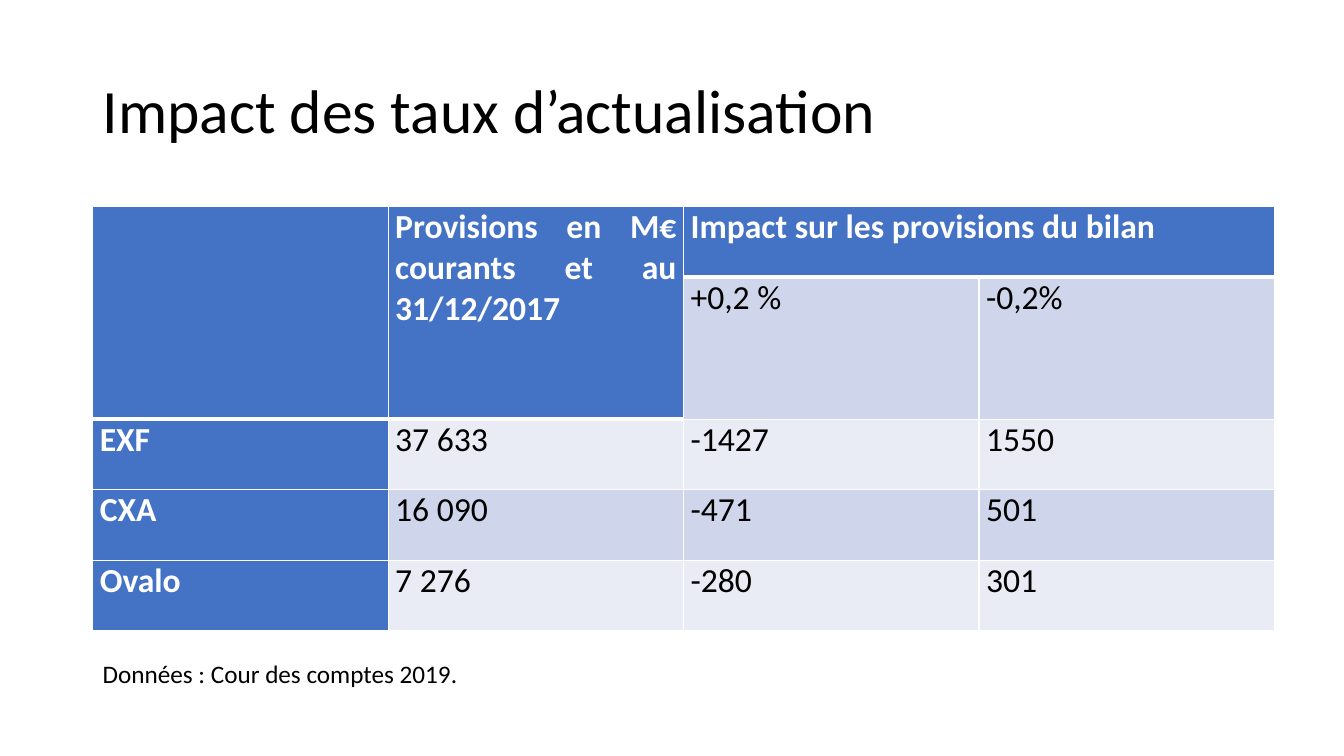
"""Build a slide with a table on the impact of discount rates."""
import pptx
import pptx.dml.color
import pptx.enum.text
import pptx.oxml
import pptx.oxml.ns
import pptx.util

Inches = pptx.util.Inches
Pt = pptx.util.Pt
RGBColor = pptx.dml.color.RGBColor
Align = pptx.enum.text.PP_ALIGN
Anchor = pptx.enum.text.MSO_ANCHOR

BLACK = RGBColor(0x00, 0x00, 0x00)
WHITE = RGBColor(0xFF, 0xFF, 0xFF)
BLUE = RGBColor(0x44, 0x72, 0xC4)
BAND_DARK = RGBColor(0xCF, 0xD5, 0xEA)
BAND_LIGHT = RGBColor(0xE9, 0xEB, 0xF5)

LEFT = Inches(0.92)
ROWS = [
    ["", "Provisions en M€ courants et au 31/12/2017", "Impact sur les provisions du bilan", ""],
    ["", "", "+0,2 %", "-0,2%"],
    ["EXF", "37 633", "-1427", "1550"],
    ["CXA", "16 090", "-471", "501"],
    ["Ovalo", "7 276", "-280", "301"],
]
ROW_HEIGHTS = [0.7, 1.41, 0.7, 0.7, 0.7]


def write(frame, text, size=24, color=BLACK, bold=False, align=Align.LEFT, spacing=1.0):
    para = frame.paragraphs[0]
    para.alignment = align
    para.line_spacing = spacing
    span = para.add_run()
    span.text = text
    span.font.name = "Calibri"
    span.font.size = Pt(size)
    span.font.bold = bold
    span.font.color.rgb = color


def add_border(cell, side, width):
    line = pptx.oxml.parse_xml(
        f'<a:{side} {pptx.oxml.ns.nsdecls("a")} w="{Pt(width)}">'
        f'<a:solidFill><a:srgbClr val="{WHITE}"/></a:solidFill></a:{side}>'
    )
    cell._tc.get_or_add_tcPr().append(line)


deck = pptx.Presentation()
deck.slide_width = Inches(13.33)
deck.slide_height = Inches(7.5)
page = deck.slides.add_slide(deck.slide_layouts[5])

title = page.shapes.title
title.left, title.top = LEFT, Inches(0.4)
title.width, title.height = Inches(11.5), Inches(1.45)
title.text_frame.vertical_anchor = Anchor.MIDDLE
write(title.text_frame, "Impact des taux d’actualisation", size=44, spacing=0.9)

table = page.shapes.add_table(5, 4, LEFT, Inches(2.05), Inches(11.72), Inches(4.22)).table
for column in table.columns:
    column.width = Inches(2.93)
for row, height in zip(table.rows, ROW_HEIGHTS):
    row.height = Inches(height)

for row_index, texts in enumerate(ROWS):
    for column_index, text in enumerate(texts):
        cell = table.cell(row_index, column_index)
        cell.margin_left = cell.margin_right = Inches(0.07)
        cell.margin_top = cell.margin_bottom = 0
        header_rows = 2 if column_index < 2 else 1
        is_header = row_index < header_rows or column_index == 0
        if text:
            write(cell.text_frame, text, color=WHITE if is_header else BLACK,
                  bold=is_header, align=Align.JUSTIFY)
        add_border(cell, "lnL", 1)
        add_border(cell, "lnR", 1)
        add_border(cell, "lnT", 3 if row_index == header_rows else 1)
        add_border(cell, "lnB", 3 if row_index < header_rows else 1)
        cell.fill.solid()
        band = BAND_DARK if row_index % 2 else BAND_LIGHT
        cell.fill.fore_color.rgb = BLUE if is_header else band

table.cell(0, 0).merge(table.cell(1, 0))
table.cell(0, 1).merge(table.cell(1, 1))
table.cell(0, 2).merge(table.cell(0, 3))

source_box = page.shapes.add_textbox(LEFT, Inches(6.48), Inches(6.67), Inches(0.4))
source_box.text_frame.word_wrap = True
write(source_box.text_frame, "Données : Cour des comptes 2019.", size=18)

deck.save("out.pptx")
